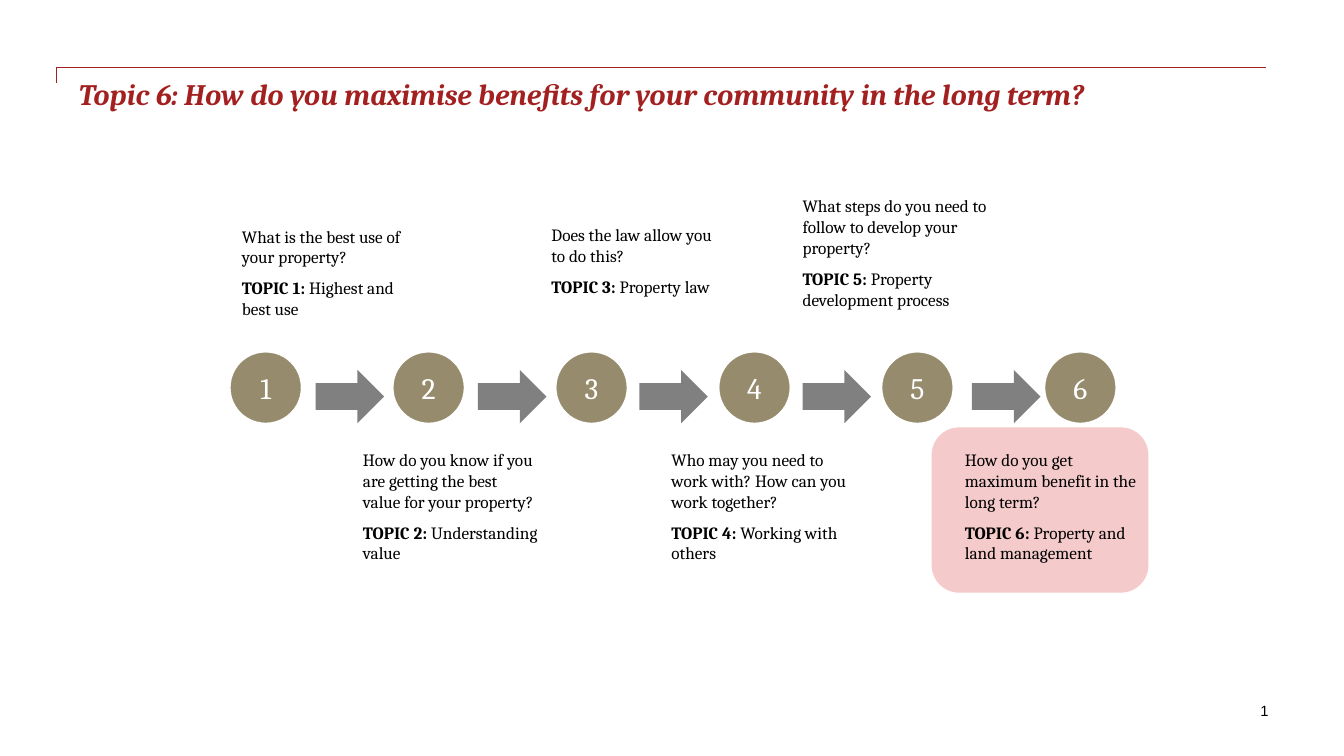
import pptx
import pptx.util
import pptx.dml.color
import pptx.enum.shapes
import pptx.enum.text
import pptx.oxml
import pptx.oxml.ns
from dataclasses import dataclass
from lxml import etree

TITLE = "Topic 6: How do you maximise benefits for your community in the long term?"
TOPICS = [
    ("What is the best use of your property?", "Highest and best use", (2.4, 2.24, 1.74, 1.22)),
    ("How do you know if you are getting the best value for your property?", "Understanding value",
     (3.6, 4.46, 1.74, 1.22)),
    ("Does the law allow you to do this?", "Property law", (5.47, 2.23, 1.74, 0.96)),
    ("Who may you need to work with? How can you work together?", "Working with others",
     (6.66, 4.46, 1.74, 1.22)),
    ("What steps do you need to follow to develop your property?", "Property development process",
     (7.96, 1.94, 1.98, 1.22)),
    ("How do you get maximum benefit in the long term?", "Property and land management",
     (9.57, 4.46, 1.74, 1.22)),
]
SLIDE_SIZE = (13.33, 7.5)
TITLE_BOX = (0.78, 0.75, 11.78, 1)
HIGHLIGHT_BOX = (9.24, 4.24, 2.15, 1.64)
NUMBER_BOX = (9.04, 6.87, 3.64, 0.35)
BRACKET = [(0.56, 0.82), (0.56, 0.67), (12.56, 0.67)]
FIRST_CIRCLE, LAST_CIRCLE, CIRCLE_TOP, CIRCLE_SIZE = 2.29, 10.37, 3.5, 0.69
ARROW_LEFTS = [3.13, 4.74, 6.34, 7.96, 9.64]
ARROW_TOP, ARROW_WIDTH, ARROW_HEIGHT = 3.67, 0.68, 0.53


@dataclass(frozen=True)
class Theme:
    serif: str = "Cambria"
    sans: str = "Arial"
    accent: str = "A32020"
    circle: str = "968C6D"
    arrow: str = "808080"
    highlight: str = "EA9696"
    light: str = "FFFFFF"
    ink: str = "000000"
    heading_size: float = 21.2
    body_size: float = 12.3
    number_size: float = 10.6


THEME = Theme()
SHAPES = pptx.enum.shapes.MSO_SHAPE
ANCHOR = pptx.enum.text.MSO_ANCHOR
ALIGN = pptx.enum.text.PP_ALIGN


def inches(values):
    return [pptx.util.Inches(value) for value in values]


def colour(value):
    return pptx.dml.color.RGBColor.from_string(value)


def style(paragraph, size, tint, font=THEME.serif, align=ALIGN.LEFT):
    paragraph.alignment = align
    paragraph.font.name = font
    paragraph.font.size = pptx.util.Pt(size)
    paragraph.font.color.rgb = colour(tint)


def clear_insets(frame):
    frame.margin_left = frame.margin_right = frame.margin_top = frame.margin_bottom = 0
    frame.word_wrap = True


def add_solid(slide, kind, box, fill):
    shape = slide.shapes.add_shape(kind, *inches(box))
    shape.shadow.inherit = False
    shape.fill.solid()
    shape.fill.fore_color.rgb = colour(fill)
    shape.line.fill.background()
    return shape


def add_bracket(slide):
    start, *corners = [inches(point) for point in BRACKET]
    builder = slide.shapes.build_freeform(*start)
    builder.add_line_segments(corners, close=False)
    bracket = builder.convert_to_shape()
    bracket.shadow.inherit = False
    bracket.fill.background()
    bracket.line.color.rgb = colour(THEME.accent)
    bracket.line.width = pptx.util.Pt(1)


def add_highlight(slide):
    highlight = add_solid(slide, SHAPES.ROUNDED_RECTANGLE, HIGHLIGHT_BOX, THEME.highlight)
    tint = highlight.fill._xPr.find(".//" + pptx.oxml.ns.qn("a:srgbClr"))
    etree.SubElement(tint, pptx.oxml.ns.qn("a:alpha"), val="50000")


def set_title(slide):
    title = slide.shapes.title
    title.left, title.top, title.width, title.height = inches(TITLE_BOX)
    frame = title.text_frame
    frame.text = TITLE
    clear_insets(frame)
    frame.auto_size = pptx.enum.text.MSO_AUTO_SIZE.NONE
    frame.vertical_anchor = ANCHOR.TOP
    paragraph = frame.paragraphs[0]
    style(paragraph, THEME.heading_size, THEME.accent)
    paragraph.font.bold = paragraph.font.italic = True


def add_circle(slide, number):
    pitch = (LAST_CIRCLE - FIRST_CIRCLE) / (len(TOPICS) - 1)
    left = FIRST_CIRCLE + (number - 1) * pitch
    circle = add_solid(slide, SHAPES.OVAL, (left, CIRCLE_TOP, CIRCLE_SIZE, CIRCLE_SIZE), THEME.circle)
    circle.line.color.rgb = colour(THEME.circle)
    circle.line.width = pptx.util.Pt(0.25)
    circle.text_frame.text = str(number)
    circle.text_frame.vertical_anchor = ANCHOR.MIDDLE
    style(circle.text_frame.paragraphs[0], THEME.heading_size, THEME.light, align=ALIGN.CENTER)


def add_topic(slide, number, question, name, box):
    frame = slide.shapes.add_textbox(*inches(box)).text_frame
    clear_insets(frame)
    frame.text = question
    label = frame.add_paragraph()
    heading = label.add_run()
    heading.text = f"TOPIC {number}: "
    heading.font.bold = True
    label.add_run().text = name
    for paragraph in frame.paragraphs:
        style(paragraph, THEME.body_size, THEME.ink)
        paragraph.space_after = pptx.util.Pt(7.5)


def add_slide_number(slide):
    frame = slide.shapes.add_textbox(*inches(NUMBER_BOX)).text_frame
    frame.word_wrap = True
    frame.vertical_anchor = ANCHOR.MIDDLE
    paragraph = frame.paragraphs[0]
    style(paragraph, THEME.number_size, THEME.ink, THEME.sans, ALIGN.RIGHT)
    field = etree.SubElement(paragraph._p, pptx.oxml.ns.qn("a:fld"),
                             id="{B6F15528-21DE-4FAA-801E-634DDDAF4B2B}", type="slidenum")
    properties = etree.SubElement(field, pptx.oxml.ns.qn("a:rPr"),
                                  lang="en-GB", sz=str(round(THEME.number_size * 100)))
    fill = etree.SubElement(properties, pptx.oxml.ns.qn("a:solidFill"))
    etree.SubElement(fill, pptx.oxml.ns.qn("a:srgbClr"), val=THEME.ink)
    etree.SubElement(properties, pptx.oxml.ns.qn("a:latin"), typeface=THEME.sans)
    etree.SubElement(field, pptx.oxml.ns.qn("a:t")).text = "1"


def main():
    presentation = pptx.Presentation()
    presentation.slide_width, presentation.slide_height = inches(SLIDE_SIZE)
    slide = presentation.slides.add_slide(presentation.slide_layouts.get_by_name("Title Only"))
    add_bracket(slide)
    add_highlight(slide)
    set_title(slide)
    for number, (question, name, box) in enumerate(TOPICS, 1):
        add_circle(slide, number)
        add_topic(slide, number, question, name, box)
    for left in ARROW_LEFTS:
        add_solid(slide, SHAPES.RIGHT_ARROW, (left, ARROW_TOP, ARROW_WIDTH, ARROW_HEIGHT), THEME.arrow)
    add_slide_number(slide)
    presentation.save("out.pptx")


if __name__ == "__main__":
    main()
